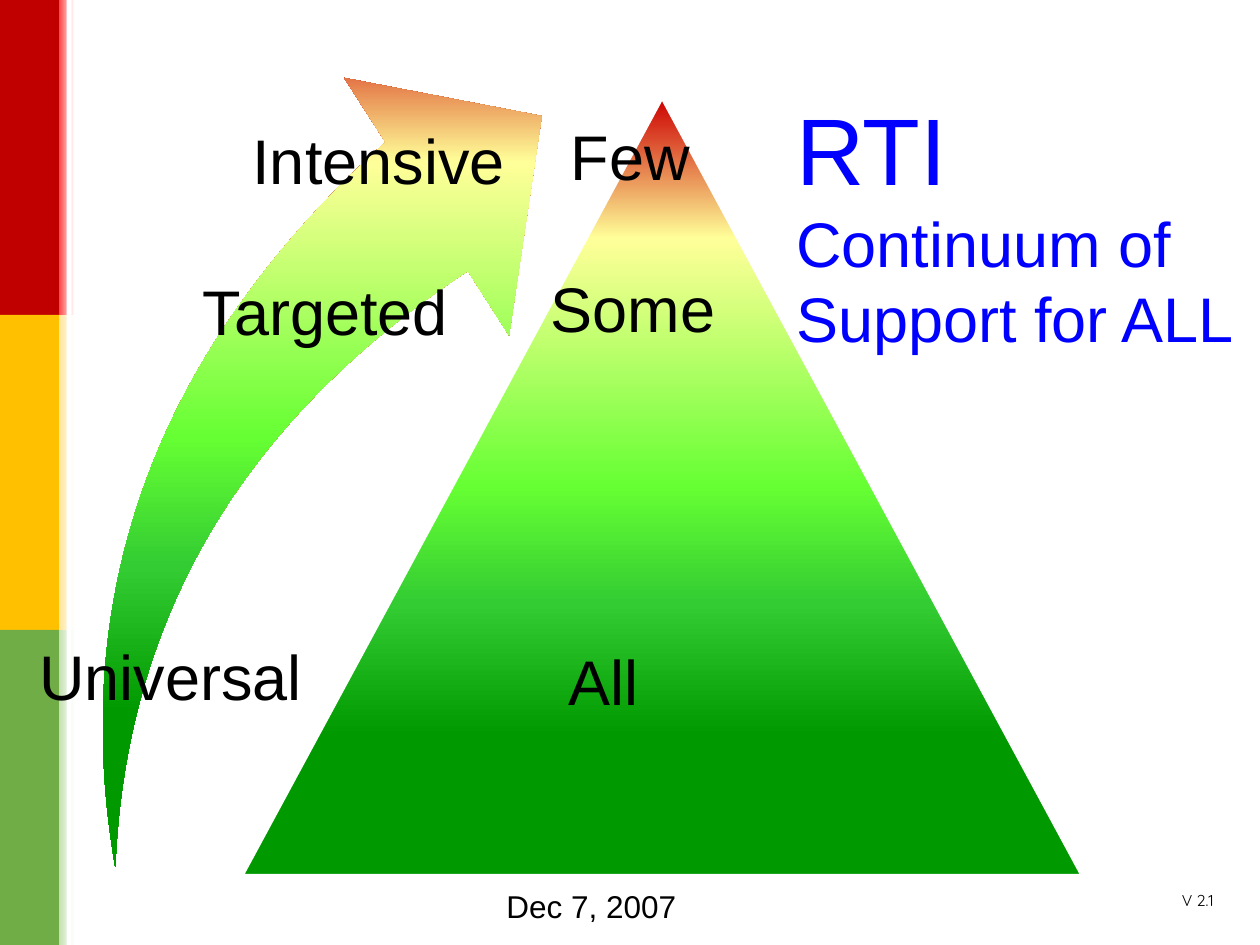
import pptx
import pptx.util
import pptx.dml.color
import pptx.enum.shapes
import pptx.enum.text
import pptx.oxml

Inches, Pt = pptx.util.Inches, pptx.util.Pt
RGB = pptx.dml.color.RGBColor
KIND = pptx.enum.shapes.MSO_SHAPE
ALIGN = pptx.enum.text.PP_ALIGN
FIT = pptx.enum.text.MSO_AUTO_SIZE
ANCHOR = pptx.enum.text.MSO_ANCHOR

WIDE, HIGH = Inches(10), Inches(7.5)
COL, ROW = WIDE / 10, HIGH / 7.5
WHITE, BLACK = RGB(255, 255, 255), RGB(0, 0, 0)
BLUE = RGB(0, 0, 255)
RED, GOLD, GREEN = RGB(192, 0, 0), RGB(255, 192, 0), RGB(112, 173, 71)
ROSE, CREAM, MINT = RGB(255, 71, 71), RGB(254, 229, 153), RGB(196, 224, 178)
LEVELS = [(0, RGB(204, 0, 0)), (18, RGB(255, 255, 153)), (50, RGB(102, 255, 51)),
          (65, RGB(51, 204, 51)), (82, RGB(0, 153, 0))]


def place(box):
    """Turn a box in columns and rows into slide lengths."""
    x, y, w, h = box
    return [int(n) for n in (x * COL, y * ROW, w * COL, h * ROW)]


def blend(shape, stops, angle):
    """Fill a shape with a gradient that stays level when the shape turns."""
    marks = "".join(f'<a:gs pos="{pos * 1000}"><a:srgbClr val="{tone}"/></a:gs>'
                    for pos, tone in stops)
    fill = pptx.oxml.parse_xml(
        '<a:gradFill xmlns:a="http://schemas.openxmlformats.org/drawingml/2006/main" '
        f'rotWithShape="0"><a:gsLst>{marks}</a:gsLst>'
        f'<a:lin ang="{angle * 60000}" scaled="0"/></a:gradFill>')
    props = shape.element.spPr
    props.insert(list(props).index(props.prstGeom) + 1, fill)


def draw(slide, kind, box, fill=None):
    """Add a flat shape without an outline."""
    shape = slide.shapes.add_shape(kind, *place(box))
    shape.shadow.inherit = False
    shape.line.fill.background()
    if fill is not None:
        shape.fill.solid()
        shape.fill.fore_color.rgb = fill
    return shape


def inset(frame, left, top, right, bottom):
    """Set the margins of a text frame in columns and rows."""
    frame.margin_left, frame.margin_right = int(left * COL), int(right * COL)
    frame.margin_top, frame.margin_bottom = int(top * ROW), int(bottom * ROW)


def style(font, size, tone=BLACK, name="Arial"):
    """Set the face, size and colour of a font."""
    font.name, font.size = name, Pt(size)
    font.color.rgb = tone


def write(slide, box, text, size, name="Arial"):
    """Add a wrapped text box and return its frame."""
    frame = slide.shapes.add_textbox(*place(box)).text_frame
    frame.word_wrap = True
    frame.text = text
    style(frame.paragraphs[0].runs[0].font, size, name=name)
    return frame


def label(slide, box, text, left, align):
    """Add one large level label."""
    frame = write(slide, box, text, 36)
    inset(frame, left, 0, 0, 0)
    para = frame.paragraphs[0]
    para.alignment, para.line_spacing = align, 0.9


def stripe(slide, box):
    """Stack three colour bands with a soft right edge."""
    x, y, w, h = box
    step, edge = h / 3, 0.12
    for i, (tone, glow) in enumerate([(RED, ROSE), (GOLD, CREAM), (GREEN, MINT)]):
        top = y + i * step
        draw(slide, KIND.RECTANGLE, (x, top, w - edge, step), tone)
        soft = draw(slide, KIND.RECTANGLE, (x + w - edge, top, edge, step))
        blend(soft, [(0, glow), (100, WHITE)], 0)
    draw(slide, KIND.RECTANGLE, (x + w - edge / 2, y, 0.04, h), WHITE)


def tower(slide, box):
    """Draw the triangle of support."""
    shape = draw(slide, KIND.TRAPEZOID, box)
    shape.adjustments[0] = 0.54
    blend(shape, LEVELS, 90)
    shape.line.color.rgb, shape.line.width = WHITE, Pt(2)


def groups(slide, box):
    """Name who is served at each level of the triangle."""
    x, y = box[:2]
    for dx, dy, w, text in [(2.39, 4.39, 1.61, "All"), (2.25, 1.43, 2.08, "Some"),
                            (2.41, 0.22, 1.58, "Few")]:
        label(slide, (x + dx, y + dy, w, 0.54), text, 0.2, ALIGN.LEFT)


def climb(slide, box):
    """Draw the rising arrow and its three levels."""
    x, y = box[:2]
    arrow = draw(slide, KIND.SWOOSH_ARROW, box)
    arrow.adjustments[0] = arrow.adjustments[1] = 0.25
    arrow.rotation = 333.8
    blend(arrow, LEVELS, 90)
    for dx, dy, w, h, left, text in [
            (0.32, 4.07, 2.87, 0.7, 0.08, "Universal"),
            (1.71, 1.17, 2.48, 0.69, 0.14, "Targeted"),
            (2.08, -0.03, 2.53, 0.54, 0.2, "Intensive")]:
        label(slide, (x + dx, y + dy, w, h), text, left, ALIGN.CENTER)


def head(slide, box):
    """Place and format the title."""
    title = slide.shapes.title
    title.left, title.top, title.width, title.height = place(box)
    frame = title.text_frame
    frame.text = "RTI\vContinuum of Support for ALL"
    frame.word_wrap, frame.auto_size = True, FIT.NONE
    frame.vertical_anchor = ANCHOR.MIDDLE
    inset(frame, 0.07, 0.07, 0.07, 0.62)
    para = frame.paragraphs[0]
    para.alignment = ALIGN.LEFT
    for run, size in zip(para.runs, (54, 36)):
        style(run.font, size, BLUE)


def foot(slide, box):
    """Write the date and the version along the bottom."""
    x, y, w, h = box
    write(slide, (x + 3.92, y, 2.58, h), "Dec 7, 2007", 18)
    mark = write(slide, (x + w - 0.69, y + 0.04, 0.69, 0.3), "V 2.1", 9, "Quicksand")
    inset(mark, 0.07, 0.04, 0.07, 0.04)


def main():
    """Build and save the slide."""
    deck = pptx.Presentation()
    deck.slide_width, deck.slide_height = WIDE, HIGH
    slide = deck.slides.add_slide(deck.slide_layouts[5])
    stripe(slide, (0, 0, 0.59, 7.5))
    frame = (1.92, 0.78, 6.67, 6.17)
    tower(slide, frame)
    climb(slide, (-0.44, 1.06, 5.67, 4.82))
    groups(slide, frame)
    foot(slide, (0, 6.99, 10, 0.51))
    head(slide, (6.25, 1.32, 3.75, 1.45))
    deck.save("out.pptx")


if __name__ == "__main__":
    main()
